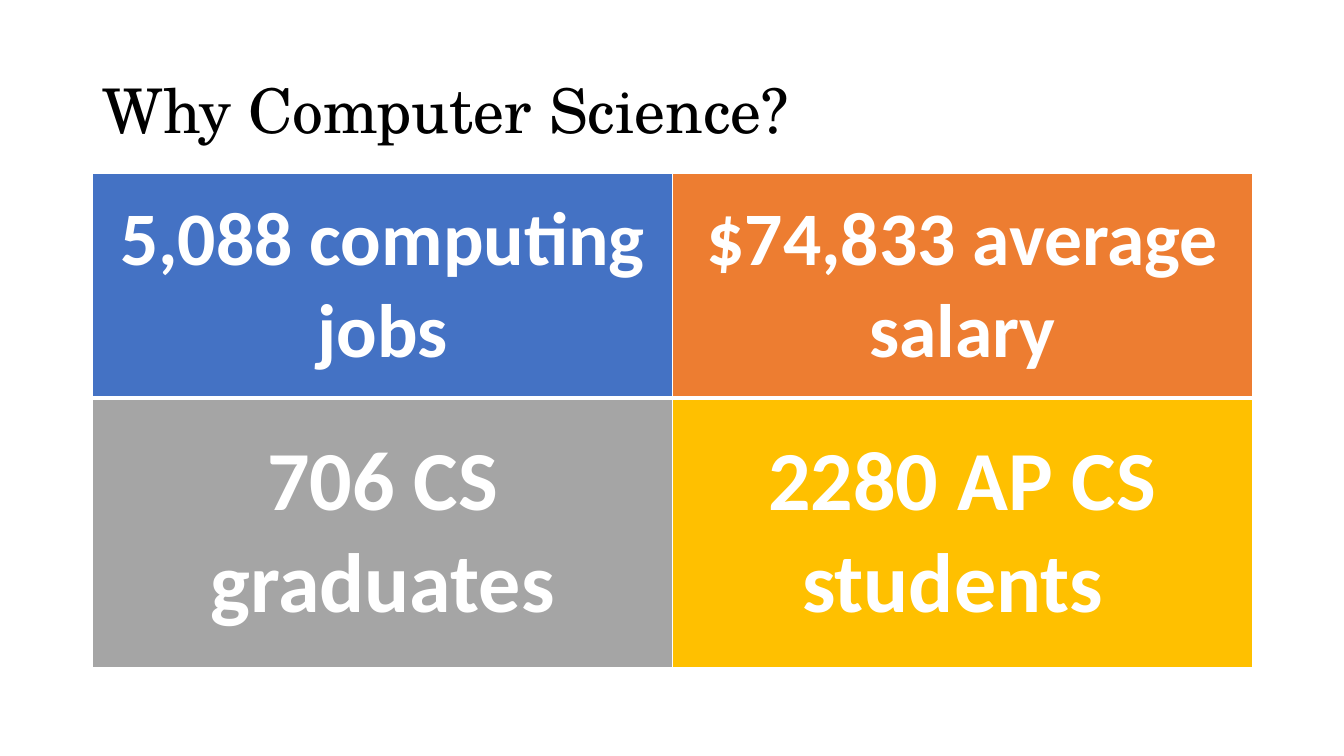
from dataclasses import dataclass

from lxml import etree
from pptx import Presentation
from pptx.dml.color import RGBColor
from pptx.enum import text
from pptx.oxml import ns
from pptx.util import Inches, Pt


@dataclass(frozen=True)
class Theme:
    title_font: str = "TeX Gyre Schola"
    body_font: str = "Calibri"
    black: str = "000000"
    white: str = "FFFFFF"
    blue: str = "4472C4"
    orange: str = "ED7D31"
    grey: str = "A5A5A5"
    gold: str = "FFC000"
    title_size: int = 44
    top_size: int = 54
    bottom_size: int = 60


theme = Theme()


def write(tf, words, font, size, color, bold=False,
          align=text.PP_ALIGN.LEFT, spacing=1.0):
    p = tf.paragraphs[0]
    p.alignment = align
    p.line_spacing = spacing
    r = p.add_run()
    r.text = words
    r.font.name = font
    r.font.size = Pt(size)
    r.font.bold = bold
    r.font.color.rgb = RGBColor.from_string(color)


def add_border(cell, side, width):
    ln = etree.SubElement(cell._tc.get_or_add_tcPr(), ns.qn(f"a:ln{side}"),
                          w=str(Pt(width)))
    fill = etree.SubElement(ln, ns.qn("a:solidFill"))
    etree.SubElement(fill, ns.qn("a:srgbClr"), val=theme.white)


prs = Presentation()
prs.slide_width, prs.slide_height = Inches(13.33), Inches(7.5)
s = prs.slides.add_slide(prs.slide_layouts[5])

# Title
title = s.shapes.title
title.left, title.top = Inches(0.92), Inches(0.4)
title.width, title.height = Inches(11.5), Inches(1.45)
tf = title.text_frame
tf.auto_size = text.MSO_AUTO_SIZE.NONE
tf.vertical_anchor = text.MSO_ANCHOR.MIDDLE
write(tf, "Why Computer Science?", theme.title_font, theme.title_size,
      theme.black, spacing=0.9)

# Table of key figures: height, text size, bottom border, cells
rows = [
    (2.23, theme.top_size, 3, [("5,088 computing jobs", theme.blue),
                               ("$74,833 average salary", theme.orange)]),
    (2.67, theme.bottom_size, 1, [("706 CS graduates", theme.grey),
                                  ("2280 AP CS students ", theme.gold)]),
]
table = s.shapes.add_table(2, 2, Inches(0.92), Inches(1.72),
                           Inches(11.5), Inches(4.9)).table
for i, (height, size, bottom, figures) in enumerate(rows):
    table.rows[i].height = Inches(height)
    for j, (words, color) in enumerate(figures):
        cell = table.cell(i, j)
        for side, width in zip("LRTB", (1, 1, 1, bottom)):
            add_border(cell, side, width)
        cell.fill.solid()
        cell.fill.fore_color.rgb = RGBColor.from_string(color)
        cell.vertical_anchor = text.MSO_ANCHOR.MIDDLE
        write(cell.text_frame, words, theme.body_font, size, theme.white,
              bold=True, align=text.PP_ALIGN.CENTER)

prs.save("out.pptx")
